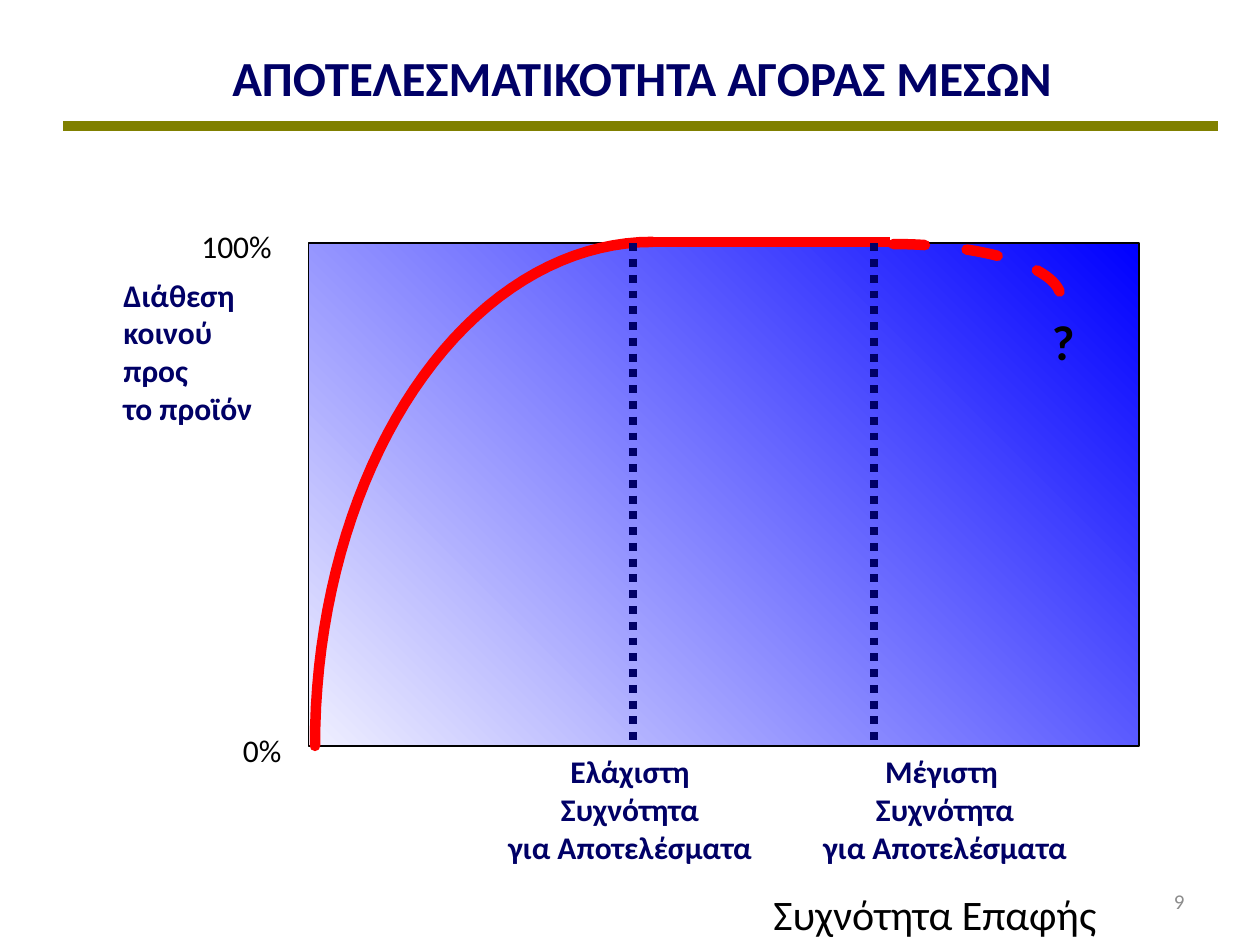
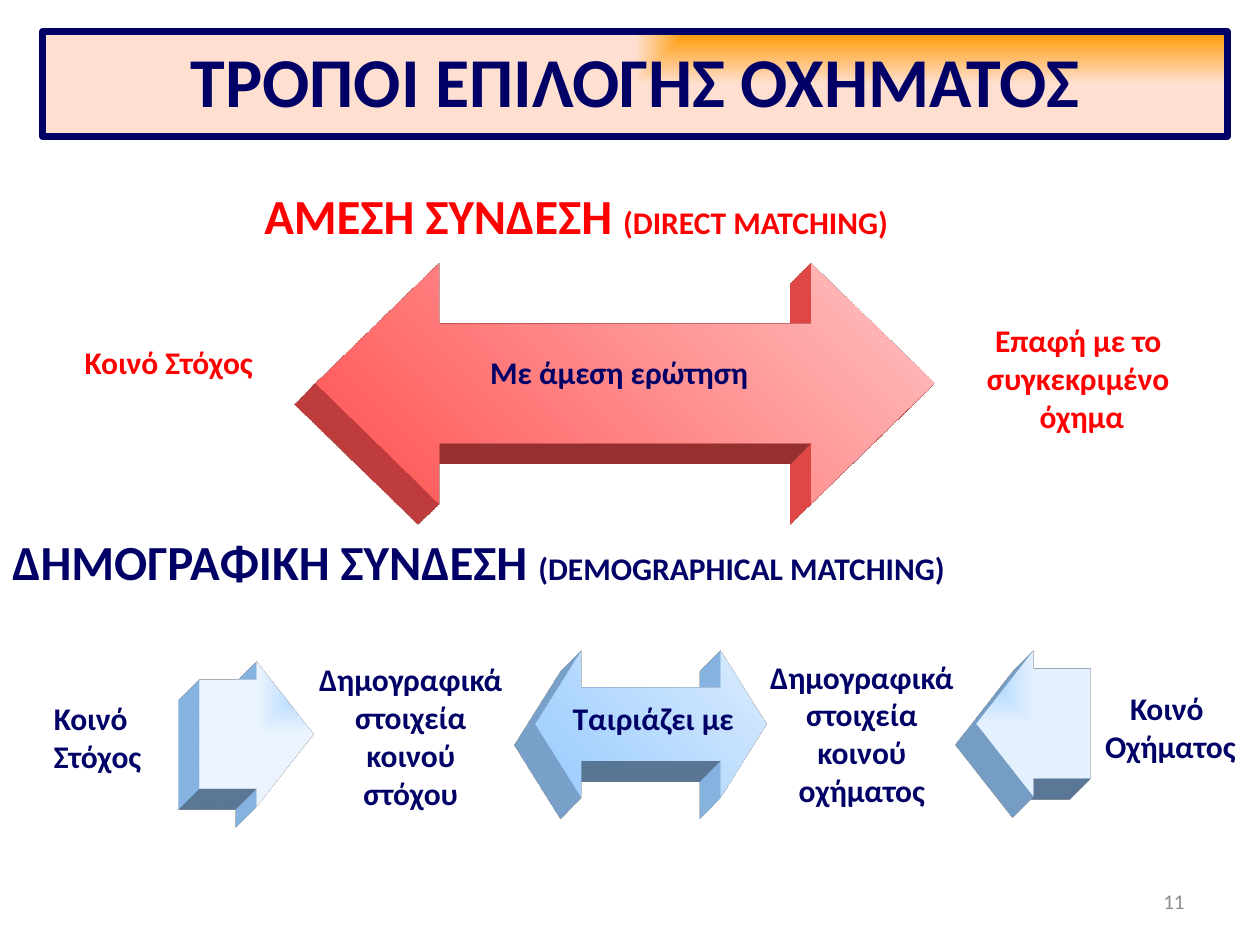
"""Build two slides on media buying and ways to choose a vehicle."""
import math
from dataclasses import dataclass

from lxml import etree
from pptx import Presentation
from pptx import util as u
from pptx.dml import color
from pptx.enum import dml, shapes, text
from pptx.oxml import ns

Pt = u.Pt
KIND = shapes.MSO_SHAPE
ALIGN = text.PP_ALIGN
DASH = dml.MSO_LINE
FONT = "Calibri"
HEX = {
    "navy": "000066", "red": "FF0000", "black": "000000", "grey": "8C8C8C",
    "olive": "808000", "blue": "0000FF", "pale": "F0F0FF", "gold": "FF9900",
    "peach": "FFE0D0", "rose": "FF5050", "pink": "FFC3C3", "sky": "99CCFF",
    "ice": "DCEDFF", "mist": "ECF5FF", "haze": "E4F1FF",
}


@dataclass
class Label:
    words: str
    left: float
    top: float
    wide: float
    high: float
    hue: str = "navy"
    size: float = 18
    bold: bool = True
    align: ALIGN = ALIGN.CENTER
    tail: str = ""


@dataclass
class Arrow:
    kind: KIND
    left: float
    top: float
    wide: float
    high: float
    shaft: float
    head: float
    start: str
    end: str
    focus: str = ""


@dataclass
class Rule:
    ends: tuple[float, float, float, float]
    hue: str
    width: float
    dash: DASH | None = None


def rgb(name: str) -> color.RGBColor:
    return color.RGBColor.from_string(HEX[name])


def write(frame, words: str, *, hue="navy", size=18, bold=True,
          align=ALIGN.CENTER, tail="", anchor=text.MSO_ANCHOR.TOP) -> None:
    frame.word_wrap = False
    frame.auto_size = text.MSO_AUTO_SIZE.SHAPE_TO_FIT_TEXT
    frame.vertical_anchor = anchor
    frame.margin_left = frame.margin_right = Pt(7.2)
    frame.margin_top = frame.margin_bottom = Pt(3.6)
    for i, line in enumerate(words.split("\n")):
        para = frame.paragraphs[0] if i == 0 else frame.add_paragraph()
        para.alignment = align
        for part, points in ((line, size), (tail, 18)):
            if part:
                run = para.add_run()
                run.text = part
                run.font.name = FONT
                run.font.size = Pt(points)
                run.font.bold = bold
                run.font.color.rgb = rgb(hue)


def put_label(slide, label: Label) -> None:
    box = slide.shapes.add_textbox(
        Pt(label.left), Pt(label.top), Pt(label.wide), Pt(label.high))
    write(box.text_frame, label.words, hue=label.hue, size=label.size,
          bold=label.bold, align=label.align, tail=label.tail)


def put_title(slide, words: str, left: float, top: float, wide: float,
              high: float, size: float):
    title = slide.shapes.title
    title.left, title.top = Pt(left), Pt(top)
    title.width, title.height = Pt(wide), Pt(high)
    write(title.text_frame, words, size=size)
    return title


def put_page(slide, page: int) -> None:
    box = slide.shapes.add_textbox(Pt(516), Pt(500.5), Pt(168), Pt(28.75))
    write(box.text_frame, str(page), hue="grey", size=12, bold=False,
          align=ALIGN.RIGHT, anchor=text.MSO_ANCHOR.MIDDLE)
    box.text_frame.auto_size = text.MSO_AUTO_SIZE.NONE
    box.text_frame.word_wrap = True


def stroke(line, hue: str, width: float, dash: DASH | None = None) -> None:
    line.color.rgb = rgb(hue)
    line.width = Pt(width)
    if dash:
        line.dash_style = dash


def blend(shape, start: str, end: str, focus: str = "") -> None:
    """Fill diagonally, or from the corner that focus names."""
    shape.fill.gradient()
    for stop, name in zip(shape.fill.gradient_stops, (start, end)):
        stop.color.rgb = rgb(name)
    shape.fill.gradient_angle = 45
    if focus:
        lin = shape.element.spPr.find(".//" + ns.qn("a:lin"))
        track = etree.Element(ns.qn("a:path"), {"path": "rect"})
        sides = {"l": "100000", "b": "100000"} if focus == "right" else {
            "r": "100000", "b": "100000"}
        etree.SubElement(track, ns.qn("a:fillToRect"), sides)
        lin.getparent().replace(lin, track)


def put_rule(slide, rule: Rule) -> None:
    line = slide.shapes.add_connector(
        shapes.MSO_CONNECTOR.STRAIGHT, *(Pt(end) for end in rule.ends))
    stroke(line.line, rule.hue, rule.width, rule.dash)
    etree.SubElement(line.element.spPr, ns.qn("a:effectLst"))


def put_arc(slide, mid: tuple[float, float], wide: float, high: float,
            turn: int, dash: DASH | None = None) -> None:
    """Draw a quarter ellipse clockwise from the angle turn."""
    steps = 40
    angles = [math.radians(turn + 90 * i / steps) for i in range(steps + 1)]
    dots = [(Pt(mid[0] + wide * math.cos(a)), Pt(mid[1] + high * math.sin(a)))
            for a in angles]
    pen = slide.shapes.build_freeform(*dots[0])
    pen.add_line_segments(dots[1:], close=False)
    curve = pen.convert_to_shape()
    curve.shadow.inherit = False
    curve.fill.background()
    stroke(curve.line, "red", 6, dash)
    curve.element.spPr.find(ns.qn("a:ln")).set("cap", "rnd")


def put_arrow(slide, arrow: Arrow) -> None:
    shape = slide.shapes.add_shape(
        arrow.kind, Pt(arrow.left), Pt(arrow.top), Pt(arrow.wide), Pt(arrow.high))
    shape.adjustments[0] = arrow.shaft
    shape.adjustments[1] = arrow.head
    shape.shadow.inherit = False
    shape.line.fill.background()
    blend(shape, arrow.start, arrow.end, arrow.focus)
    props = shape.element.spPr
    scene = etree.SubElement(props, ns.qn("a:scene3d"))
    etree.SubElement(scene, ns.qn("a:camera"), prst="legacyObliqueBottomLeft")
    etree.SubElement(scene, ns.qn("a:lightRig"), rig="legacyFlat3", dir="t")
    solid = etree.SubElement(props, ns.qn("a:sp3d"), extrusionH="430200",
                             prstMaterial="legacyMatte")
    side = etree.SubElement(solid, ns.qn("a:extrusionClr"))
    etree.SubElement(side, ns.qn("a:srgbClr"), val=HEX[arrow.start])


def reach_slide(deck) -> None:
    slide = deck.slides.add_slide(deck.slide_layouts[5])
    put_title(slide, "ΑΠΟΤΕΛΕΣΜΑΤΙΚΟΤΗΤΑ ΑΓΟΡΑΣ ΜΕΣΩΝ", 57.6, 23.75, 618.5, 40.3, 28)
    plot = slide.shapes.add_shape(
        KIND.RECTANGLE, Pt(176.25), Pt(139), Pt(474.5), Pt(287.25))
    plot.shadow.inherit = False
    blend(plot, "pale", "blue")
    stroke(plot.line, "black", 1)
    put_arc(slide, (373, 426.25), 193, 288, 180)
    put_rule(slide, Rule((369.5, 138.25, 508.5, 138.25), "red", 6))
    put_arc(slide, (510.5, 170.5), 95.75, 31, 270, DASH.DASH)
    for x in (361.5, 499.5):
        put_rule(slide, Rule((x, 139, x, 426.25), "navy", 4.5, DASH.ROUND_DOT))
    put_rule(slide, Rule((36, 72, 696, 72), "olive", 6))
    plain = {"hue": "black", "bold": False}
    for label in (
        Label("100%", 108, 126, 60.5, 31, align=ALIGN.LEFT, **plain),
        Label("0%", 131.75, 414, 41, 31, align=ALIGN.LEFT, **plain),
        Label("Διάθεση\nκοινού\nπρος\nτο προϊόν", 63.4, 154, 95.75, 103,
              align=ALIGN.LEFT),
        Label("Συχνότητα Επαφής", 426.25, 504, 216, 36, size=24, **plain),
        Label("?", 594, 174.25, 31, 40.3, hue="black", size=28, align=ALIGN.LEFT),
        Label("Ελάχιστη\nΣυχνότητα\nγια Αποτελέσματα", 281.5, 426.25, 157, 72),
        Label("Μέγιστη \nΣυχνότητα\nγια Αποτελέσματα", 461.5, 426.25, 157, 72),
    ):
        put_label(slide, label)
    put_page(slide, 9)


def match_slide(deck) -> None:
    slide = deck.slides.add_slide(deck.slide_layouts[5])
    title = put_title(slide, "ΤΡΟΠΟΙ ΕΠΙΛΟΓΗΣ ΟΧΗΜΑΤΟΣ", 24.5, 18, 676.8, 59, 40)
    blend(title, "gold", "peach", "right")
    stroke(title.line, "navy", 4)
    both = KIND.LEFT_RIGHT_ARROW
    for arrow in (
        Arrow(both, 180, 150, 354, 138, 0.5, 0.513, "rose", "pink"),
        Arrow(KIND.RIGHT_ARROW, 114, 378, 65, 83, 0.75, 0.5, "sky", "mist", "right"),
        Arrow(both, 306, 372, 132, 84, 0.5, 0.314, "sky", "ice"),
        Arrow(KIND.LEFT_ARROW, 558, 372, 65, 83, 0.75, 0.5, "sky", "haze", "left"),
    ):
        put_arrow(slide, arrow)
    for label in (
        Label("ΑΜΕΣΗ ΣΥΝΔΕΣΗ ", 144, 102.25, 489.6, 40.3, hue="red", size=28,
              align=ALIGN.LEFT, tail="(DIRECT MATCHING)"),
        Label("ΔΗΜΟΓΡΑΦΙΚΗ ΣΥΝΔΕΣΗ ", 0, 300.25, 717.8, 40.3, size=28,
              align=ALIGN.LEFT, tail="(DEMOGRAPHICAL MATCHING)"),
        Label("Κοινό Στόχος", 30.25, 192.25, 132.5, 31, hue="red"),
        Label("Επαφή με το \nσυγκεκριμένο \nόχημα", 549.4, 180, 137.5, 79, hue="red"),
        Label("Με άμεση ερώτηση", 262, 198, 183.6, 31),
        Label("Κοινό\nΣτόχος", 23.75, 396, 76.3, 54.7, align=ALIGN.LEFT),
        Label("Δημογραφικά\nστοιχεία\nκοινού\nστόχου", 168.5, 373.75, 132.5, 103),
        Label("Ταιριάζει με", 312.5, 396, 121.7, 31),
        Label("Δημογραφικά\nστοιχεία\nκοινού\nοχήματος", 426.25, 372.25, 132.5, 103),
        Label("Κοινό \nΟχήματος", 617, 390.25, 103.7, 54.7),
    ):
        put_label(slide, label)
    put_page(slide, 11)


def main() -> None:
    deck = Presentation()
    deck.slide_width, deck.slide_height = Pt(720), Pt(540)
    reach_slide(deck)
    match_slide(deck)
    deck.save("out.pptx")


if __name__ == "__main__":
    main()
